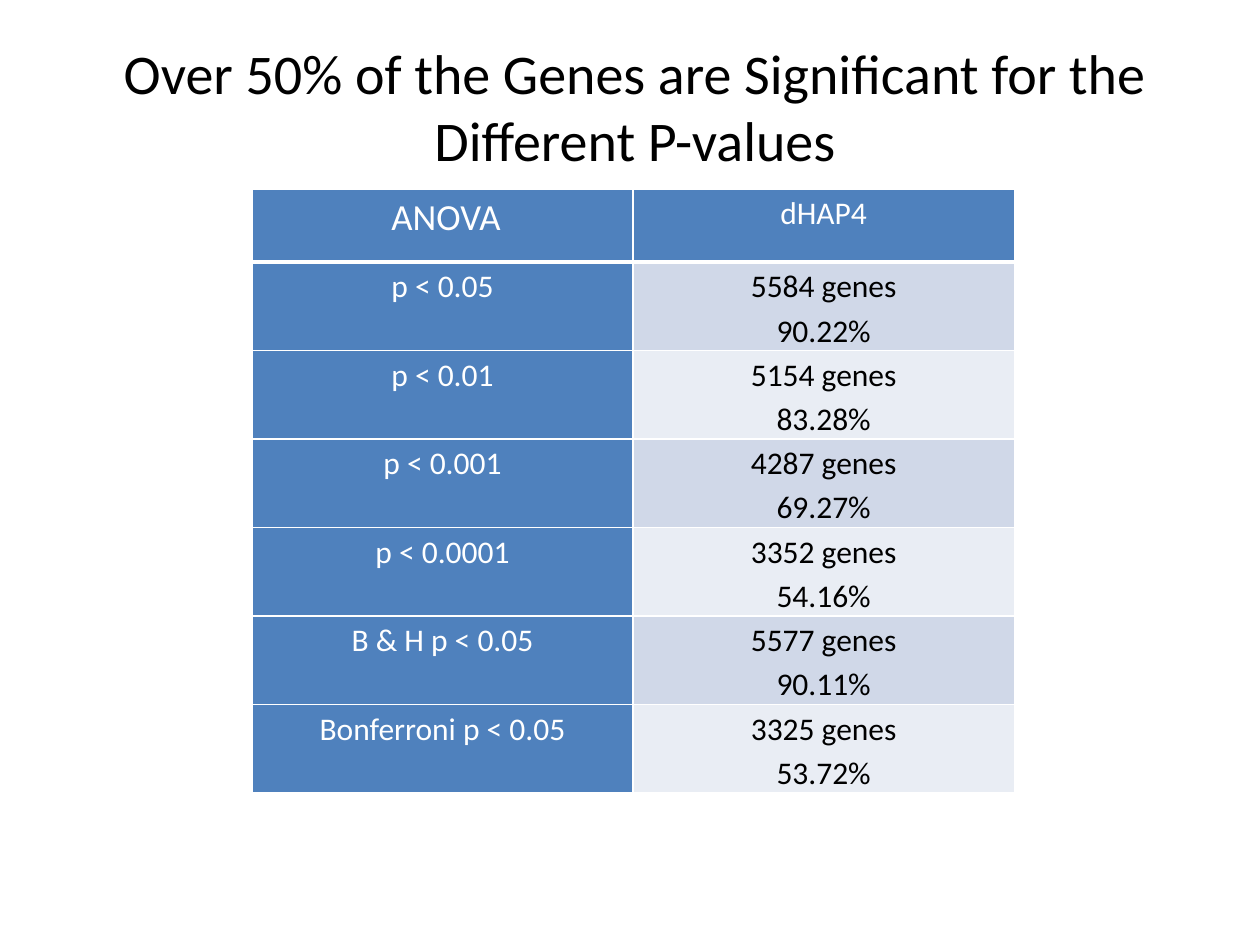
from dataclasses import dataclass

from lxml import etree
from pptx import Presentation
from pptx.dml.color import RGBColor
from pptx.enum import text
from pptx.oxml import ns
from pptx.util import Inches, Pt


@dataclass(frozen=True)
class Theme:
    font: str = "Calibri"
    blue: str = "4F81BD"
    bands: tuple = ("D0D8E8", "E9EDF4")
    white: str = "FFFFFF"
    black: str = "000000"
    title_size: int = 32
    head_size: int = 21
    body_size: int = 18


THEME = Theme()

RESULTS = [
    ("p < 0.05", "5584 genes", "90.22%"),
    ("p < 0.01", "5154 genes", "83.28%"),
    ("p < 0.001", "4287 genes", "69.27%"),
    ("p < 0.0001", "3352 genes", "54.16%"),
    ("B & H p < 0.05", "5577 genes", "90.11%"),
    ("Bonferroni p < 0.05", "3325 genes", "53.72%"),
]


def add_span(para, words, size, color):
    span = para.add_run()
    span.text = words
    span.font.name = THEME.font
    span.font.size = Pt(size)
    span.font.bold = False
    span.font.color.rgb = RGBColor.from_string(color)


def set_borders(cell, bottom=1):
    """Draw white rules round a cell; they must precede its fill in the XML."""
    props = cell._tc.get_or_add_tcPr()
    widths = {"a:lnL": 1, "a:lnR": 1, "a:lnT": 1, "a:lnB": bottom}
    for index, (tag, width) in enumerate(widths.items()):
        line = etree.Element(ns.qn(tag), w=str(Pt(width)))
        fill = etree.SubElement(line, ns.qn("a:solidFill"))
        etree.SubElement(fill, ns.qn("a:srgbClr"), val=THEME.white)
        props.insert(index, line)


def fill_cell(cell, lines, fill, color, bottom=1):
    """Write lines into a cell, each line being a list of (words, size)."""
    cell.margin_left = cell.margin_right = Inches(0.07)
    cell.margin_top = cell.margin_bottom = 0
    cell.fill.solid()
    cell.fill.fore_color.rgb = RGBColor.from_string(fill)
    set_borders(cell, bottom)
    frame = cell.text_frame
    for index, spans in enumerate(lines):
        para = frame.add_paragraph() if index else frame.paragraphs[0]
        para.alignment = text.PP_ALIGN.CENTER
        para.line_spacing = 1.15
        for words, size in spans:
            add_span(para, words, size, color)


def add_title(page, words):
    box = page.shapes.title
    box.left, box.top = Inches(0.33), Inches(0.25)
    box.width, box.height = Inches(9.42), Inches(1.18)
    frame = box.text_frame
    frame.word_wrap = True
    frame.auto_size = text.MSO_AUTO_SIZE.NONE
    frame.vertical_anchor = text.MSO_ANCHOR.MIDDLE
    para = frame.paragraphs[0]
    para.alignment = text.PP_ALIGN.CENTER
    add_span(para, words, THEME.title_size, THEME.black)


def add_results_table(page):
    row_height = Inches(0.58)
    row_count = len(RESULTS) + 1
    table = page.shapes.add_table(
        row_count, 2, Inches(2), Inches(1.5), Inches(6.05), row_height * row_count
    ).table

    # Header row
    body = THEME.body_size
    headers = [[(" ", body), ("ANOVA", THEME.head_size)], [("dHAP4", body)]]
    for column, spans in enumerate(headers):
        fill_cell(table.cell(0, column), [spans], THEME.blue, THEME.white, bottom=3)

    # One row per threshold, with alternating bands
    for row, (threshold, genes, share) in enumerate(RESULTS, start=1):
        band = THEME.bands[(row - 1) % 2]
        fill_cell(table.cell(row, 0), [[(threshold, body)]], THEME.blue, THEME.white)
        fill_cell(table.cell(row, 1), [[(genes, body)], [(share, body)]], band, THEME.black)


def main():
    deck = Presentation()
    deck.slide_width, deck.slide_height = Inches(10), Inches(7.5)
    page = deck.slides.add_slide(deck.slide_layouts[5])
    add_results_table(page)
    add_title(page, "Over 50% of the Genes are Significant for the Different P-values")
    deck.save("out.pptx")


if __name__ == "__main__":
    main()
